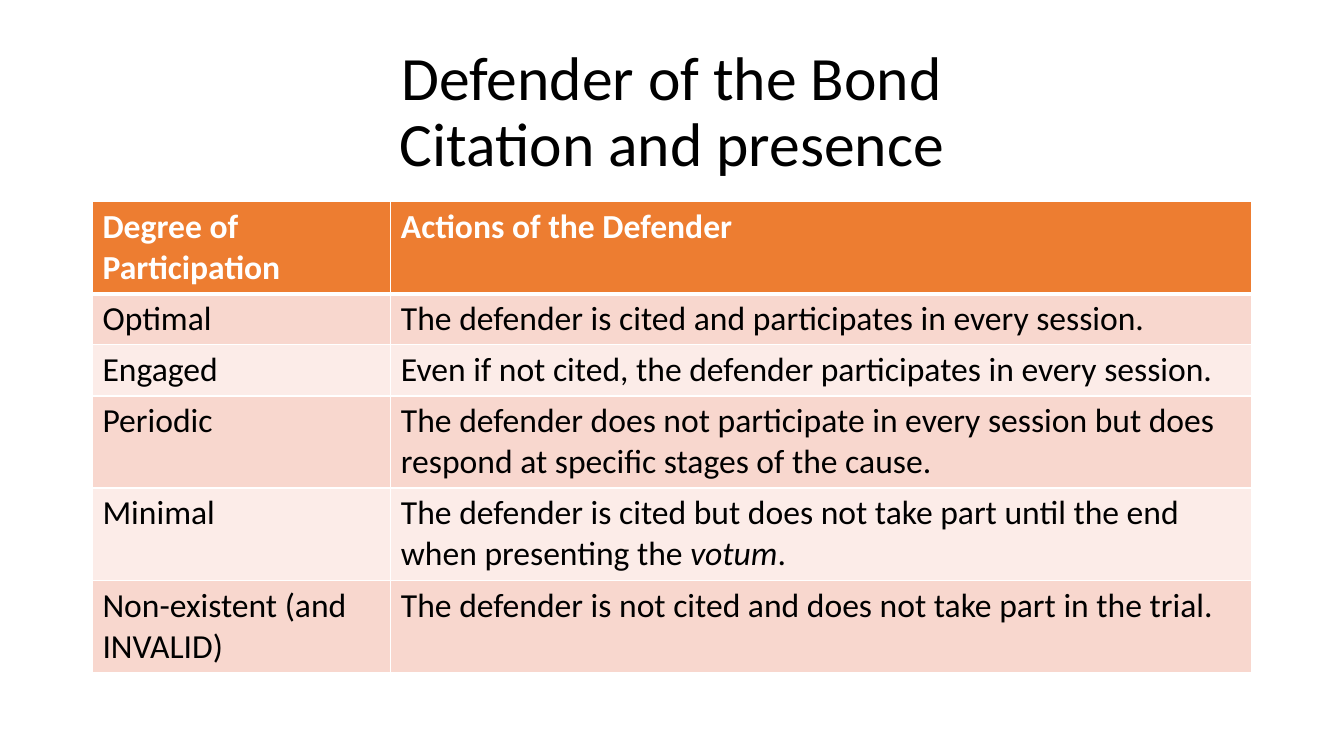
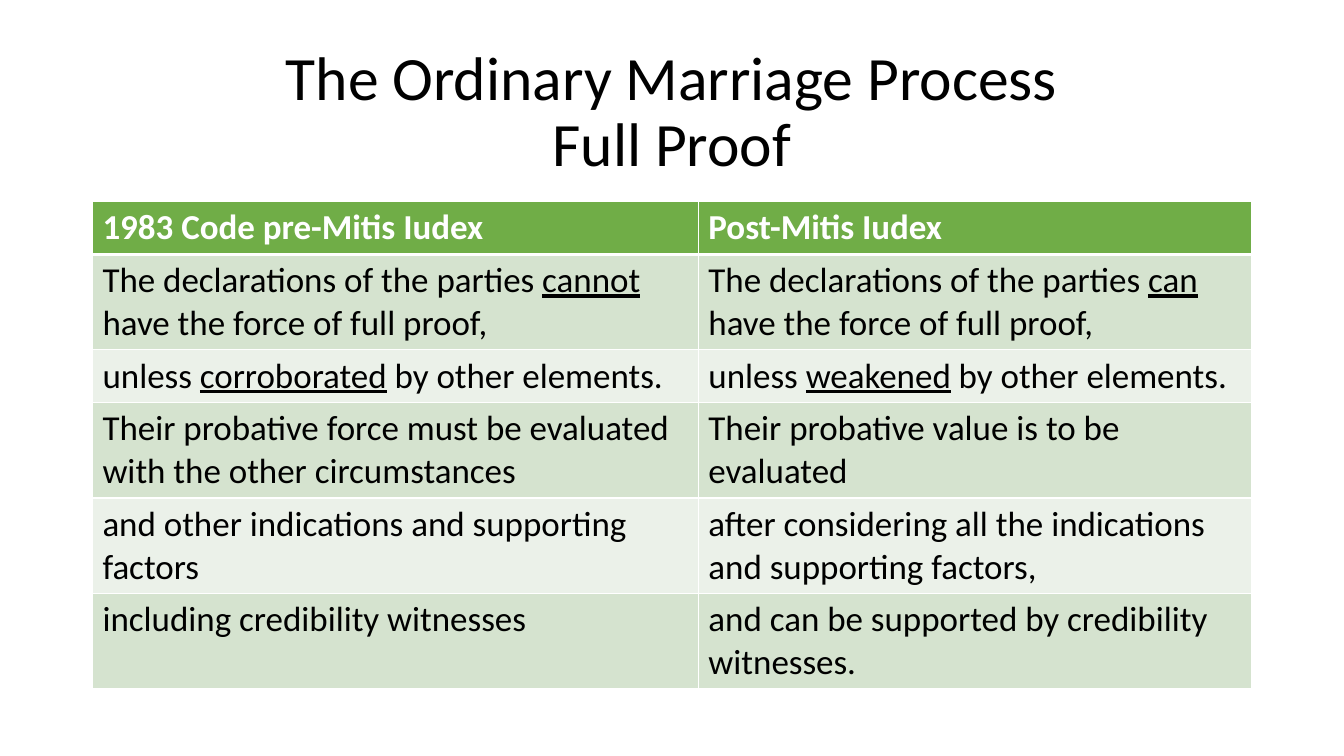
from dataclasses import dataclass

from lxml import etree
from pptx import Presentation
from pptx import util as u
from pptx.dml.color import RGBColor
from pptx.enum import text
from pptx.oxml import ns


@dataclass(frozen=True)
class Theme:
    font: str = "Calibri"
    title_size: int = 44
    ink: str = "000000"
    paper: str = "FFFFFF"
    thin_rule: int = 1
    thick_rule: int = 3
    left: float = 2.33
    width: float = 29.21
    title_top: float = 1.02
    title_height: float = 3.68
    table_top: float = 5.08


@dataclass(frozen=True)
class Palette:
    header: str
    odd_row: str
    even_row: str


THEME = Theme()
ORANGE = Palette("ED7D31", "F8D7CE", "FCECE8")
GREEN = Palette("70AD47", "D5E3CF", "EBF1E9")

PARTICIPATION_ROWS = [
    ("Degree of Participation", "Actions of the Defender"),
    ("Optimal", "The defender is cited and participates in every session."),
    ("Engaged", "Even if not cited, the defender participates in every session."),
    ("Periodic", "The defender does not participate in every session but does "
                 "respond at specific stages of the cause."),
    ("Minimal", "The defender is cited but does not take part until the end "
                "when presenting the _votum_."),
    ("Non-existent (and INVALID)",
     "The defender is not cited and does not take part in the trial."),
]

PROOF_ROWS = [
    ("1983 Code pre-Mitis Iudex", "Post-Mitis Iudex"),
    ("The declarations of the parties _cannot_ have the force of full proof,",
     "The declarations of the parties _can_ have the force of full proof,"),
    ("unless _corroborated_ by other elements.",
     "unless _weakened_ by other elements."),
    ("Their probative force must be evaluated with the other circumstances",
     "Their probative value is to be evaluated"),
    ("and other indications and supporting factors",
     "after considering all the indications and supporting factors,"),
    ("including credibility witnesses",
     "and can be supported by credibility witnesses."),
]


def style_font(font, size, color, bold=False):
    font.name = THEME.font
    font.size = u.Pt(size)
    font.bold = bold
    font.color.rgb = RGBColor.from_string(color)


def add_titled_slide(presentation, title_lines):
    slide = presentation.slides.add_slide(presentation.slide_layouts[5])
    title = slide.shapes.title
    title.left, title.top = u.Cm(THEME.left), u.Cm(THEME.title_top)
    title.width, title.height = u.Cm(THEME.width), u.Cm(THEME.title_height)
    frame = title.text_frame
    frame.word_wrap = True
    frame.auto_size = text.MSO_AUTO_SIZE.NONE
    frame.vertical_anchor = text.MSO_ANCHOR.MIDDLE
    paragraph = frame.paragraphs[0]
    paragraph.alignment = text.PP_ALIGN.CENTER
    paragraph.line_spacing = 0.9
    style_font(paragraph.font, THEME.title_size, THEME.ink)
    for index, line in enumerate(title_lines):
        if index:
            paragraph.add_line_break()
        paragraph.add_run().text = line
    return slide


def set_borders(cell, top, bottom):
    properties = cell._tc.get_or_add_tcPr()
    widths = {"L": THEME.thin_rule, "R": THEME.thin_rule, "T": top, "B": bottom}
    for side, width in widths.items():
        line = etree.SubElement(properties, ns.qn(f"a:ln{side}"), w=str(u.Pt(width)))
        fill = etree.SubElement(line, ns.qn("a:solidFill"))
        etree.SubElement(fill, ns.qn("a:srgbClr"), val=THEME.paper)


def write_emphasised(paragraph, content, emphasis):
    for index, part in enumerate(content.split("_")):
        run = paragraph.add_run()
        run.text = part
        if index % 2:
            setattr(run.font, emphasis, True)


def fill_cell(cell, content, row_index, palette, size, emphasis):
    is_header = row_index == 0
    set_borders(cell,
                THEME.thick_rule if row_index == 1 else THEME.thin_rule,
                THEME.thick_rule if is_header else THEME.thin_rule)
    band = palette.odd_row if row_index % 2 else palette.even_row
    cell.fill.solid()
    cell.fill.fore_color.rgb = RGBColor.from_string(palette.header if is_header else band)
    paragraph = cell.text_frame.paragraphs[0]
    style_font(paragraph.font, size, THEME.paper if is_header else THEME.ink, is_header)
    write_emphasised(paragraph, content, emphasis)


def add_banded_table(slide, rows, first_width, row_height, palette, size, emphasis):
    widths = (first_width, THEME.width - first_width)
    table = slide.shapes.add_table(
        len(rows), len(widths), u.Cm(THEME.left), u.Cm(THEME.table_top),
        u.Cm(THEME.width), u.Cm(row_height * len(rows))).table
    for column, width in zip(table.columns, widths):
        column.width = u.Cm(width)
    for row_index, contents in enumerate(rows):
        for column_index, content in enumerate(contents):
            fill_cell(table.cell(row_index, column_index), content,
                      row_index, palette, size, emphasis)


def main():
    presentation = Presentation()
    presentation.slide_width = u.Cm(33.87)
    presentation.slide_height = u.Cm(19.05)

    slide = add_titled_slide(presentation,
                             ("Defender of the Bond", "Citation and presence"))
    add_banded_table(slide, PARTICIPATION_ROWS, 7.52, 1.04, ORANGE, 24, "italic")

    slide = add_titled_slide(presentation,
                             ("The Ordinary Marriage Process", "Full Proof"))
    add_banded_table(slide, PROOF_ROWS, 15.27, 0.86, GREEN, 25, "underline")

    presentation.save("out.pptx")


if __name__ == "__main__":
    main()
